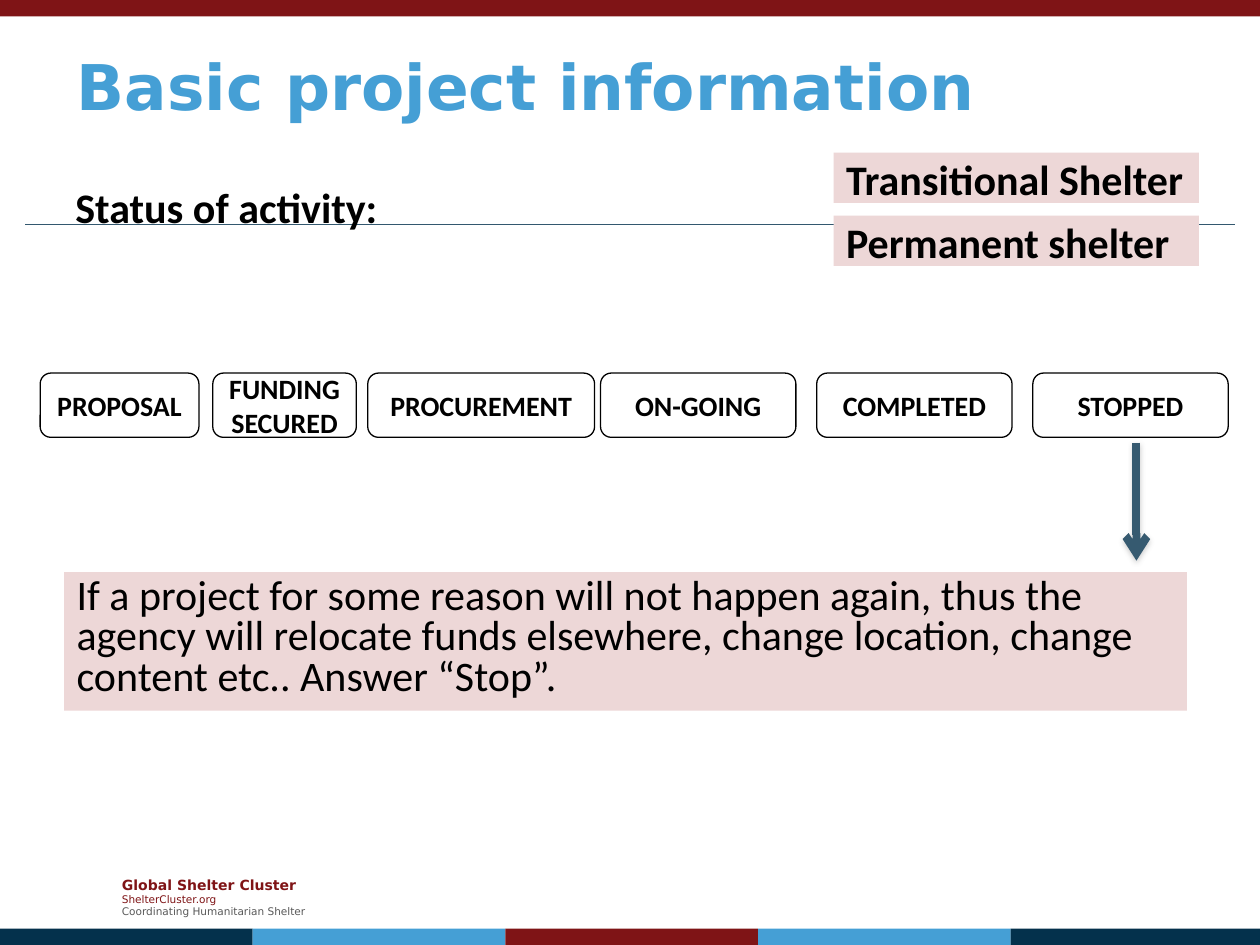
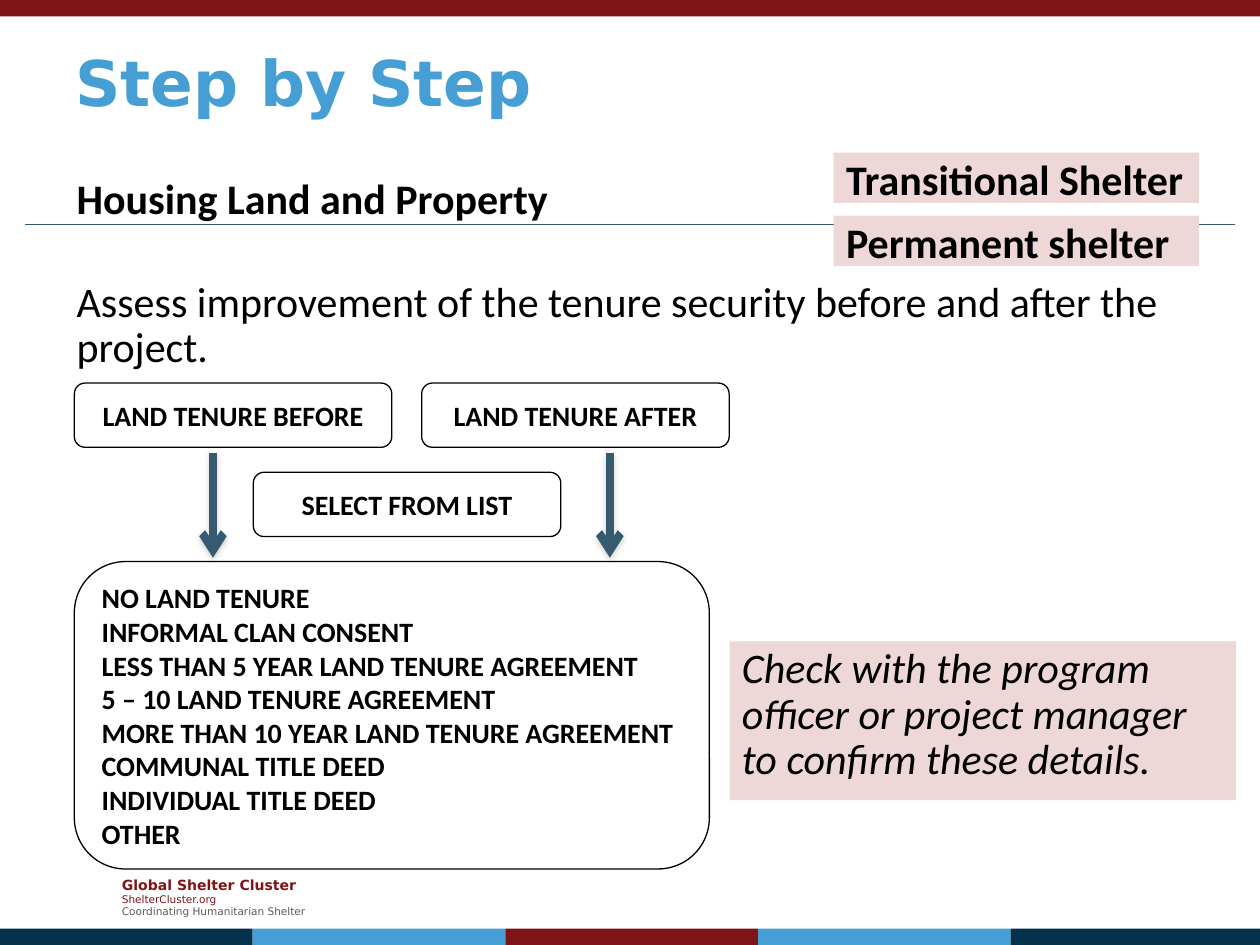
from lxml import etree
from pptx import Presentation
from pptx.dml.color import RGBColor
from pptx.enum import shapes, text
from pptx.oxml import ns
from pptx.util import Pt

MAROON = RGBColor(0x7F, 0x14, 0x16)
NAVY = RGBColor(0x04, 0x31, 0x4C)
SKY = RGBColor(0x45, 0x9F, 0xD5)
STEEL = RGBColor(0x33, 0x58, 0x6F)
ARROW = RGBColor(0x36, 0x5A, 0x70)
PINK = RGBColor(0xED, 0xD7, 0xD7)
GRAY = RGBColor(0x59, 0x59, 0x59)
BLACK = RGBColor(0, 0, 0)

HEAD_FONT, BODY_FONT = "DejaVu Sans", "Calibri"
TOP, MIDDLE = text.MSO_ANCHOR.TOP, text.MSO_ANCHOR.MIDDLE
LEFT, CENTER = text.PP_ALIGN.LEFT, text.PP_ALIGN.CENTER
RECT = shapes.MSO_SHAPE.RECTANGLE
ROUNDED = shapes.MSO_SHAPE.ROUNDED_RECTANGLE
BAND_H = 9.36
PILL_H = 36.7


def write(sp, lines, size=24, bold=False, italic=False, color=BLACK,
          font=BODY_FONT, align=LEFT, anchor=TOP, spacing=None):
    """Fill a shape with one paragraph per line, all in one style."""
    tf = sp.text_frame
    tf.word_wrap = True
    tf.vertical_anchor = anchor
    for i, line in enumerate(lines):
        p = tf.add_paragraph() if i else tf.paragraphs[0]
        p.alignment = align
        if spacing:
            p.line_spacing = spacing
        add_run(p, line, size, bold, italic, color, font)


def add_run(p, line, size, bold, italic, color, font):
    """Append one styled run to a paragraph."""
    r = p.add_run()
    r.text = line
    r.font.name, r.font.size = font, Pt(size)
    r.font.bold, r.font.italic = bold, italic
    r.font.color.rgb = color


def add_box(s, kind, box, fill=None, line=None):
    """Add a preset shape with an optional fill and outline."""
    sp = s.shapes.add_shape(kind, *map(Pt, box))
    sp.shadow.inherit = False
    if fill is None:
        sp.fill.background()
    else:
        sp.fill.solid()
        sp.fill.fore_color.rgb = fill
    if line is None:
        sp.line.fill.background()
    else:
        sp.line.color.rgb = line
        sp.line.width = Pt(0.75)
    return sp


def add_label(s, box, line, **style):
    """Add a plain text box with one paragraph."""
    write(s.shapes.add_textbox(*map(Pt, box)), [line], **style)


def add_title(s, box, line, anchor):
    """Add the slide title."""
    add_label(s, box, line, size=36, bold=True, color=SKY,
              font=HEAD_FONT, anchor=anchor)


def add_note(s, box, line, **style):
    """Add a pink highlighted note."""
    write(add_box(s, RECT, box, PINK), [line], **style)


def add_pill(s, box, lines, align=CENTER):
    """Add an outlined rounded box with bold text."""
    write(add_box(s, ROUNDED, box, line=BLACK), lines, size=16, bold=True,
          align=align, anchor=MIDDLE)


def add_line(s, x1, y1, x2, y2, color, width):
    """Add a straight line and return it with its empty effect list."""
    c = s.shapes.add_connector(shapes.MSO_CONNECTOR.STRAIGHT,
                               *map(Pt, (x1, y1, x2, y2)))
    c.line.color.rgb = color
    c.line.width = Pt(width)
    effects = etree.SubElement(c._element.spPr, ns.qn("a:effectLst"))
    return c, effects


def add_down_arrow(s, x, y, length):
    """Add a thick downward arrow with a soft shadow."""
    c, effects = add_line(s, x, y, x, y + length, ARROW, 4.5)
    etree.SubElement(c.line._get_or_add_ln(), ns.qn("a:tailEnd"), type="arrow")
    shadow = etree.SubElement(effects, ns.qn("a:outerShdw"), blurRad="40000",
                              dist="20000", dir="5400000", rotWithShape="0")
    tint = etree.SubElement(shadow, ns.qn("a:srgbClr"), val="808080")
    etree.SubElement(tint, ns.qn("a:alpha"), val="38000")


def add_footer(s, box):
    """Add the three-line organisation credit."""
    tf = s.shapes.add_textbox(*map(Pt, box)).text_frame
    tf.word_wrap = True
    tf.vertical_anchor = MIDDLE
    rows = [("Global Shelter Cluster", 8, True, MAROON),
            ("ShelterCluster.org", 6, False, MAROON),
            ("Coordinating Humanitarian Shelter", 6, False, GRAY)]
    for i, (line, size, bold, color) in enumerate(rows):
        p = tf.add_paragraph() if i else tf.paragraphs[0]
        add_run(p, line, size, bold, False, color, HEAD_FONT)


def add_frame(prs):
    """Add a blank slide with the shared bands, rule and footer."""
    s = prs.slides.add_slide(prs.slide_layouts[6])
    add_footer(s, (62.6, 496.8, 124.6, 31.7))
    add_box(s, RECT, (0, 0, 720, BAND_H), MAROON)
    band_w = 144.4
    for i, color in enumerate((NAVY, SKY, MAROON, SKY, NAVY)):
        add_box(s, RECT, (i * band_w, 540 - BAND_H, band_w, BAND_H), color)
    add_line(s, 14.4, 128.2, 705.6, 128.2, STEEL, 0.75)
    return s


def add_shelter_tags(s, x, y):
    """Stack the two shelter type tags."""
    for i, line in enumerate(("Transitional Shelter", "Permanent shelter")):
        add_note(s, (x, y + i * 36, 208.8, 28.8), line, bold=True, spacing=0.9)


def add_status_row(s, x, y):
    """Lay out the activity statuses and the arrow below the last one."""
    statuses = [("PROPOSAL", 0, 90.7), ("FUNDING SECURED", 98.6, 82),
                ("PROCUREMENT", 187.2, 129.6)]
    statuses += [(line, 320.2 + i * 123.5, 111.6)
                 for i, line in enumerate(("ON-GOING", "COMPLETED", "STOPPED"))]
    for line, dx, w in statuses:
        add_pill(s, (x + dx, y, w, PILL_H), [line])
    add_down_arrow(s, x + 626.4, y + 39.7, 67.5)


def add_tenure_flow(s, x, y):
    """Lay out the land tenure questions and the list they lead to."""
    add_pill(s, (x, y, 181.4, PILL_H), ["LAND TENURE BEFORE"])
    add_pill(s, (x + 198.5, y, 175.7, PILL_H), ["LAND TENURE AFTER"])
    add_pill(s, (x + 102.3, y + 51, 175.7, PILL_H), ["SELECT FROM LIST"])
    for dx in (79.2, 306):
        add_down_arrow(s, x + dx, y + 40, 59.8)
    add_pill(s, (x, y + 102, 362.9, 175.7), [
        "NO LAND TENURE",
        "INFORMAL CLAN CONSENT",
        "LESS THAN 5 YEAR LAND TENURE AGREEMENT",
        "5 – 10 LAND TENURE AGREEMENT",
        "MORE THAN 10 YEAR LAND TENURE AGREEMENT",
        "COMMUNAL TITLE DEED",
        "INDIVIDUAL TITLE DEED",
        "OTHER",
    ], LEFT)


def build_status_slide(prs):
    """Build the slide on the status of activity."""
    s = add_frame(prs)
    add_title(s, (36.7, 15.1, 648, 67.7), "Basic project information", MIDDLE)
    add_label(s, (36, 100.1, 648, 186.5), "Status of activity:", bold=True)
    add_status_row(s, 23, 213.2)
    add_note(s, (36.7, 326.9, 641.5, 79.2),
             "If a project for some reason will not happen again, thus the "
             "agency will relocate funds elsewhere, change location, change "
             "content etc.. Answer “Stop”.", spacing=0.8)
    add_shelter_tags(s, 476.4, 87.2)


def build_tenure_slide(prs):
    """Build the slide on housing, land and property."""
    s = add_frame(prs)
    add_title(s, (36, 21.6, 648, 55.4), "Step by Step", TOP)
    add_label(s, (36.7, 100.8, 648, 38.9), "Housing Land and Property",
              bold=True, spacing=0.8)
    add_label(s, (36.7, 157, 648, 73.4),
              "Assess improvement of the tenure security before and after "
              "the project.", spacing=0.9)
    add_tenure_flow(s, 42.5, 218.9)
    add_note(s, (416.9, 366.5, 289.4, 90.7),
             "Check with the program officer or project manager to confirm "
             "these details.", italic=True, spacing=0.9)
    add_shelter_tags(s, 476.4, 87.2)


def main():
    """Build and save the presentation."""
    prs = Presentation()
    prs.slide_width, prs.slide_height = Pt(720), Pt(540)
    build_status_slide(prs)
    build_tenure_slide(prs)
    prs.save("out.pptx")


if __name__ == "__main__":
    main()
